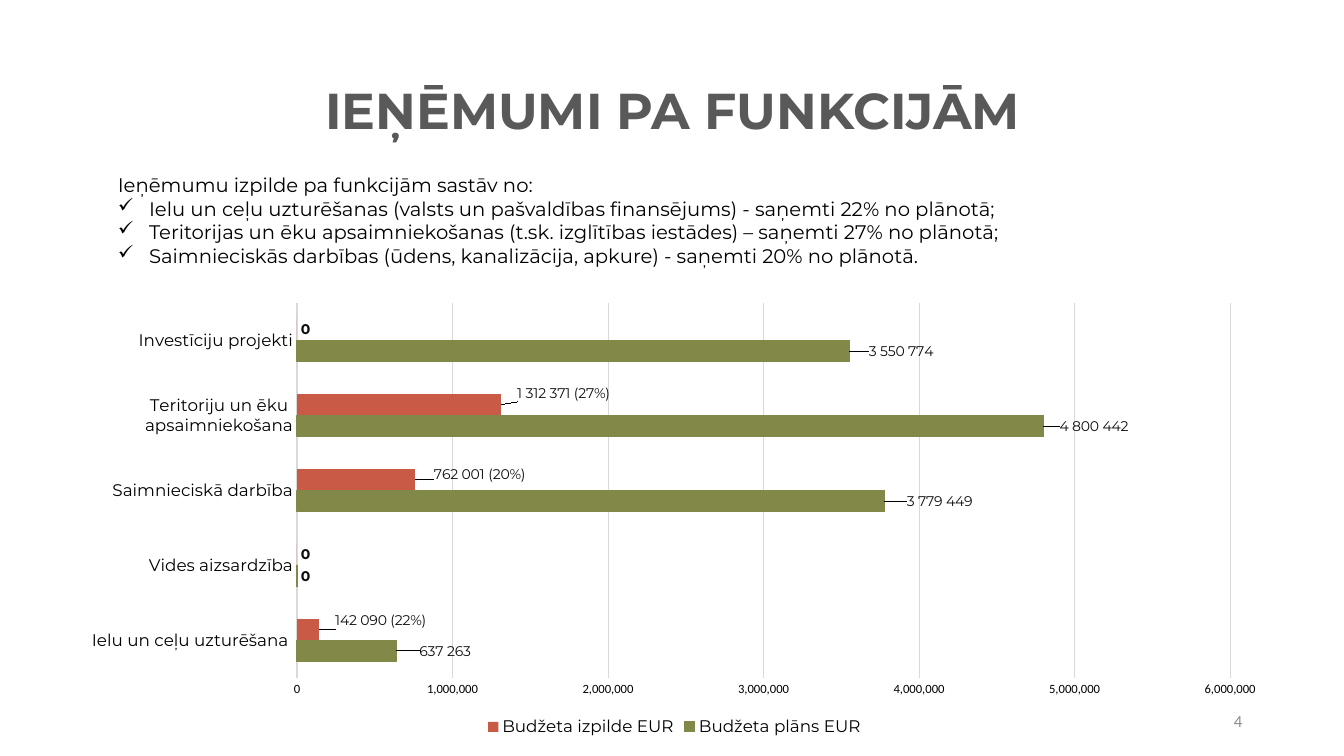
import pptx
import pptx.util
import pptx.chart.data
import pptx.dml.color
import pptx.enum.chart
import pptx.enum.text
import pptx.oxml
import pptx.oxml.ns

# Content
TITLE = "IEŅĒMUMI PA FUNKCIJĀM"
INTRO = "Ieņēmumu izpilde pa funkcijām sastāv no: "
POINTS = [
    "Ielu un ceļu uzturēšanas (valsts un pašvaldības finansējums) - saņemti 22% no plānotā; ",
    "Teritorijas un ēku apsaimniekošanas (t.sk. izglītības iestādes) – saņemti 27% no plānotā;",
    "Saimnieciskās darbības (ūdens, kanalizācija, apkure) - saņemti 20% no plānotā.",
]
PAGE_NUMBER = "4"
CATEGORIES = ["Ielu un ceļu uzturēšana ", "Vides aizsardzība", "Saimnieciskā darbība",
              "Teritoriju un ēku apsaimniekošana", "Investīciju projekti"]
# Custom labels: category index -> (text, shift right, shift down) as shares of the chart
SERIES = [
    {"name": "Budžeta plāns EUR", "color": "828847",
     "values": [637263, 0, 3779449, 4800442, 3550774],
     "labels": {0: ("637 263", 0.016, 0), 2: ("3 779 449", 0.015, 0),
                3: ("4 800 442", 0.01, 0), 4: ("3 550 774", 0.013, 0)}},
    {"name": "Budžeta izpilde EUR", "color": "C95B46",
     "values": [142090, 0, 762001, 1312371, 0],
     "labels": {0: ("142 090 (22%)", 0.01, -0.02), 2: ("762 001 (20%)", 0.012, -0.013),
                3: ("1 312 371 (27%)", 0.01, -0.025)}},
]
PLOT_AREA = {"x": 0.1885, "y": 0.019, "w": 0.77, "h": 0.84}
HEADING_FONT, NUMBER_FONT = "Montserrat", "Calibri"
NUMBER_FORMAT = "#,##0"
ALIGN = pptx.enum.text.PP_ALIGN
MIDDLE = pptx.enum.text.MSO_ANCHOR.MIDDLE


def color(value):
    return pptx.dml.color.RGBColor.from_string(value)


def inches(*lengths):
    return [pptx.util.Inches(length) for length in lengths]


def style(font, size, name=HEADING_FONT, hue="000000", bold=False):
    font.size, font.name, font.bold = pptx.util.Pt(size), name, bold
    font.color.rgb = color(hue)


def write(para, text, align=None, **font_format):
    para.alignment = align
    span = para.add_run()
    span.text = text
    style(span.font, **font_format)


def add_check(para):
    props = para._p.get_or_add_pPr()
    indent = pptx.util.Inches(0.31)
    props.set("marL", str(indent))
    props.set("indent", str(-indent))
    for tag, key, value in (("buFont", "typeface", "Wingdings"), ("buChar", "char", "ü")):
        bullet = props.makeelement(pptx.oxml.ns.qn("a:" + tag), {key: value})
        props.append(bullet)


def manual_layout(parts, inner=False):
    target = '<c:layoutTarget val="inner"/>' if inner else ""
    modes = '<c:xMode val="edge"/><c:yMode val="edge"/>' if inner else ""
    sizes = "".join(f'<c:{key} val="{share}"/>' for key, share in parts.items())
    return pptx.oxml.parse_xml(
        f'<c:layout {pptx.oxml.ns.nsdecls("c")}><c:manualLayout>'
        f"{target}{modes}{sizes}</c:manualLayout></c:layout>")


deck = pptx.Presentation()
deck.slide_width, deck.slide_height = inches(13.33, 7.5)
page = deck.slides.add_slide(deck.slide_layouts[5])

# Title
title = page.shapes.title
title.left, title.top, title.width, title.height = inches(0.92, 0.4, 11.5, 1.45)
title.text_frame.vertical_anchor = MIDDLE
title.text_frame.word_wrap = True
title.text_frame.paragraphs[0].line_spacing = 0.9
write(title.text_frame.paragraphs[0], TITLE, ALIGN.CENTER, size=36, hue="595959", bold=True)

# Page number
number_box = page.shapes.add_textbox(*inches(9.42, 6.95, 3, 0.4))
number_box.text_frame.word_wrap = True
number_box.text_frame.vertical_anchor = MIDDLE
write(number_box.text_frame.paragraphs[0], PAGE_NUMBER, ALIGN.RIGHT,
      size=12, name=NUMBER_FONT, hue="8C8C8C")

# Chart
data = pptx.chart.data.CategoryChartData(number_format=NUMBER_FORMAT)
data.categories = CATEGORIES
for entry in SERIES:
    data.add_series(entry["name"], entry["values"])
chart = page.shapes.add_chart(pptx.enum.chart.XL_CHART_TYPE.BAR_CLUSTERED,
                              *inches(0.68, 2.92, 12.02, 4.43), data).chart
chart.has_title = False
style(chart.font, 10, NUMBER_FONT)
plot = chart.plots[0]
plot.gap_width, plot.overlap, plot.vary_by_categories = 150, 0, False

plot_area = chart._chartSpace.chart.plotArea
for old_layout in plot_area.findall(pptx.oxml.ns.qn("c:layout")):
    plot_area.remove(old_layout)
plot_area.insert(0, manual_layout(PLOT_AREA, inner=True))

# Axes and legend
for axis, size, font in ((chart.category_axis, 12, HEADING_FONT),
                         (chart.value_axis, 9, NUMBER_FONT)):
    axis.major_tick_mark = axis.minor_tick_mark = pptx.enum.chart.XL_TICK_MARK.NONE
    axis.format.line.fill.background()
    style(axis.tick_labels.font, size, font)
values = chart.value_axis
values.minimum_scale, values.maximum_scale, values.major_unit = 0, 6000000, 1000000
values.tick_labels.number_format = NUMBER_FORMAT
values.tick_labels.number_format_is_linked = False
values.major_gridlines.format.line.color.rgb = color("D9D9D9")
values.major_gridlines.format.line.width = pptx.util.Pt(0.75)
chart.has_legend = True
chart.legend.position = pptx.enum.chart.XL_LEGEND_POSITION.BOTTOM
chart.legend.include_in_layout = False
style(chart.legend.font, 12)

# Bars and their labels
for series, entry in zip(plot.series, SERIES):
    series.format.fill.solid()
    series.format.fill.fore_color.rgb = color(entry["color"])
    series.invert_if_negative = False
    labels = series.data_labels
    labels.show_value = True
    labels.number_format, labels.number_format_is_linked = NUMBER_FORMAT, False
    labels.position = pptx.enum.chart.XL_LABEL_POSITION.OUTSIDE_END
    style(labels.font, 10, hue="0D0D0D", bold=True)
    for index, (text, right, down) in entry["labels"].items():
        label = series.points[index].data_label
        write(label.text_frame.paragraphs[0], text, size=10, hue="0D0D0D")
        label.position = pptx.enum.chart.XL_LABEL_POSITION.OUTSIDE_END
        label._dLbl.insert(1, manual_layout({"x": right, "y": down}))
plan_line = plot.series[0].format.line
plan_line.color.rgb = color(SERIES[0]["color"])
plan_line.width = pptx.util.Pt(0.75)

# Summary text
summary = page.shapes.add_textbox(*inches(1.07, 1.67, 11.5, 1.04)).text_frame
summary.word_wrap = True
summary.auto_size = pptx.enum.text.MSO_AUTO_SIZE.SHAPE_TO_FIT_TEXT
write(summary.paragraphs[0], INTRO, ALIGN.JUSTIFY, size=14)
for point in POINTS:
    para = summary.add_paragraph()
    write(para, point, ALIGN.JUSTIFY, size=14)
    add_check(para)

deck.save("out.pptx")
